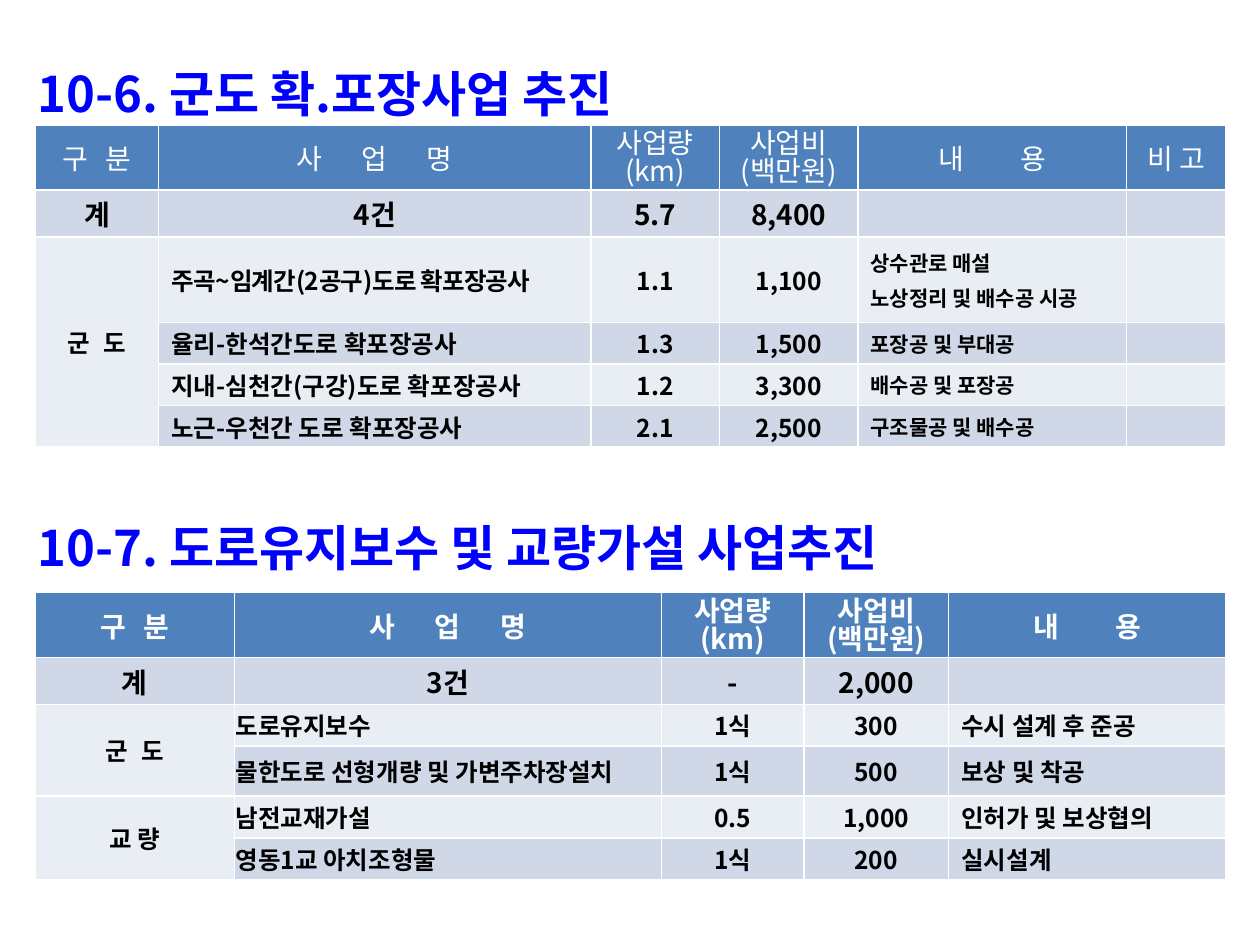
from dataclasses import dataclass

from lxml.etree import SubElement
from pptx import Presentation
from pptx.dml.color import RGBColor
from pptx.enum.text import MSO_ANCHOR as Anchor, PP_ALIGN as Align
from pptx.oxml.ns import qn
from pptx.util import Inches, Pt

BLUE = RGBColor(0x00, 0x00, 0xFF)
BLACK = RGBColor(0x00, 0x00, 0x00)
WHITE = RGBColor(0xFF, 0xFF, 0xFF)
HEADER_FILL = RGBColor(0x4F, 0x81, 0xBD)
BAND_FILLS = (RGBColor(0xE9, 0xED, 0xF4), RGBColor(0xD0, 0xD8, 0xE8))
KOREAN = "Noto Sans CJK KR"
WIDE_GAPS = {"구 분": 3.2, "군 도": 2.2, "사 업 명": 9.5, "내 용": 14.2}
TIGHT_NAME = "주곡~임계간(2공구)도로 확포장공사"


@dataclass(frozen=True)
class Section:
    title: str
    title_top: float
    title_height: float
    title_spacing: float
    left: float
    top: float
    widths: tuple[float, ...]
    heights: tuple[float, ...]
    rows: tuple[tuple[str, ...], ...]
    groups: tuple[tuple[int, int], ...]
    header_bold: bool
    item_inset: float
    detail_size: int
    detail_font: str


ROADS = Section(
    "10-6. 군도 확.포장사업 추진", 0.36, 3.59, 1.2, 0.28, 0.99,
    (0.98, 3.43, 1.02, 1.1, 2.13, 0.79),
    (0.52, 0.37, 0.68, 0.33, 0.33, 0.33),
    (
        ("구 분", "사 업 명", "사업량\n(km)", "사업비\n(백만원)", "내 용", "비 고"),
        ("계", "4건", "5.7", "8,400", "", ""),
        ("군 도", TIGHT_NAME, "1.1", "1,100", "상수관로 매설\n노상정리 및 배수공 시공", ""),
        ("", "율리-한석간도로 확포장공사", "1.3", "1,500", "포장공 및 부대공", ""),
        ("", "지내-심천간(구강)도로 확포장공사", "1.2", "3,300", "배수공 및 포장공", ""),
        ("", "노근-우천간 도로 확포장공사", "2.1", "2,500", "구조물공 및 배수공", ""),
    ),
    ((2, 5),), False, 0.1, 12, "Arial",
)

BRIDGES = Section(
    "10-7. 도로유지보수 및 교량가설 사업추진", 4.06, 3.03, 1.0, 0.28, 4.7,
    (1.58, 3.39, 1.13, 1.15, 2.2),
    (0.52, 0.37, 0.33, 0.4, 0.33, 0.33),
    (
        ("구 분", "사 업 명", "사업량\n(km)", "사업비\n(백만원)", "내 용"),
        ("계", "3건", "-", "2,000", ""),
        ("군 도", "도로유지보수", "1식", "300", "수시 설계 후 준공"),
        ("", "물한도로 선형개량 및 가변주차장설치", "1식", "500", "보상 및 착공"),
        ("교 량", "남전교재가설", "0.5", "1,000", "인허가 및 보상협의"),
        ("", "영동1교 아치조형물", "1식", "200", "실시설계"),
    ),
    ((2, 3), (4, 5)), True, 0.01, 14, KOREAN,
)


def style_run(run, size: int, color: RGBColor, bold: bool, face: str, spacing: float = 0) -> None:
    run.font.size = Pt(size)
    run.font.bold = bold
    run.font.color.rgb = color
    run.font.name = face
    properties = run._r.get_or_add_rPr()
    SubElement(properties, qn("a:ea")).set("typeface", KOREAN)
    if spacing:
        properties.set("spc", str(round(spacing * 100)))


def add_borders(cell) -> None:
    properties = cell._tc.get_or_add_tcPr()
    for side in "LRTB":
        line = SubElement(properties, qn(f"a:ln{side}"), w=str(Pt(1)))
        fill = SubElement(line, qn("a:solidFill"))
        SubElement(fill, qn("a:srgbClr"), val=str(WHITE))


def add_title(slide, section: Section) -> None:
    box = slide.shapes.add_textbox(
        Inches(0.2), Inches(section.title_top), Inches(9.76), Inches(section.title_height)
    )
    frame = box.text_frame
    frame.word_wrap = True
    frame.text = section.title
    heading = frame.paragraphs[0]
    heading.line_spacing = section.title_spacing
    style_run(heading.runs[0], 28, BLUE, True, KOREAN)


def fill_cell(cell, section: Section, row: int, column: int) -> None:
    text = section.rows[row][column]
    header, item = row == 0, row > 1
    detail = item and column == 4
    stacked_header = header and "\n" in text
    size = 16
    if item:
        size = section.detail_size if detail else 14
    inset = section.item_inset if item and column in (1, 2, 3) else 0.1
    cell.margin_left = cell.margin_right = Inches(inset)
    cell.margin_top = Inches(0.04 if stacked_header else 0.01)
    cell.margin_bottom = Inches(0.01)
    cell.vertical_anchor = Anchor.MIDDLE
    add_borders(cell)
    cell.fill.solid()
    cell.fill.fore_color.rgb = HEADER_FILL if header else BAND_FILLS[row % 2]
    cell.text_frame.text = text
    spacing = -0.5 if text == TIGHT_NAME else WIDE_GAPS.get(text, 0)
    for index, paragraph in enumerate(cell.text_frame.paragraphs):
        paragraph.alignment = Align.LEFT if item and column in (1, 4) else Align.CENTER
        if stacked_header:
            paragraph.line_spacing = 0.7
        elif index:
            paragraph.space_before = Pt(size * 0.2)
        if not text:
            paragraph.font.size = Pt(size)
        for run in paragraph.runs:
            style_run(
                run, size, WHITE if header else BLACK, section.header_bold or not header,
                section.detail_font if detail else KOREAN, spacing,
            )


def add_project_table(slide, section: Section) -> None:
    table = slide.shapes.add_table(
        len(section.rows), len(section.widths), Inches(section.left), Inches(section.top),
        Inches(sum(section.widths)), Inches(sum(section.heights)),
    ).table
    table.first_row = table.horz_banding = False
    for column, width in zip(table.columns, section.widths):
        column.width = Inches(width)
    for row, height in zip(table.rows, section.heights):
        row.height = Inches(height)
    for row in range(len(section.rows)):
        for column in range(len(section.widths)):
            fill_cell(table.cell(row, column), section, row, column)
    for first, last in section.groups:
        table.cell(first, 0).merge(table.cell(last, 0))


def main() -> None:
    deck = Presentation()
    deck.slide_width, deck.slide_height = Inches(10), Inches(7.5)
    slide = deck.slides.add_slide(deck.slide_layouts[6])
    for section in (ROADS, BRIDGES):
        add_title(slide, section)
        add_project_table(slide, section)
    deck.save("out.pptx")


if __name__ == "__main__":
    main()
